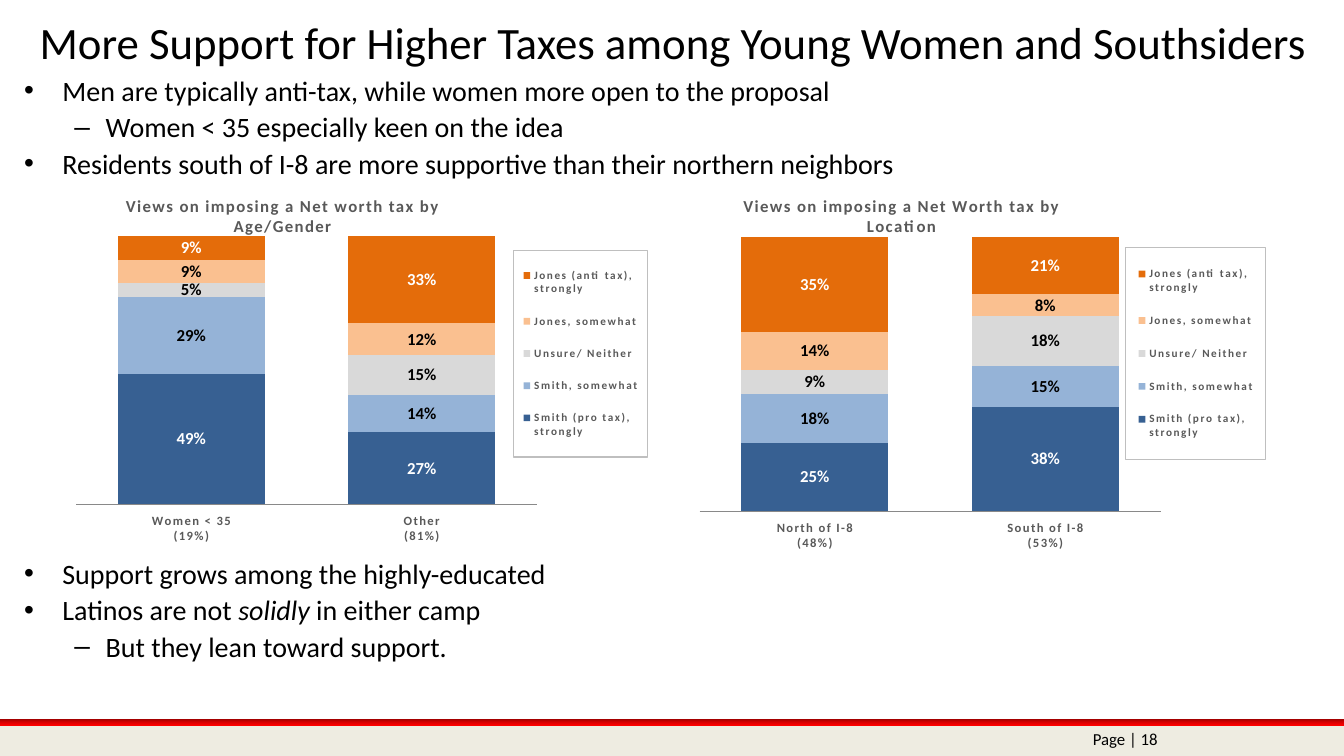
from dataclasses import dataclass

from lxml.etree import SubElement
from pptx import Presentation
from pptx.chart.data import CategoryChartData
from pptx.dml.color import RGBColor
from pptx.enum.chart import XL_CHART_TYPE, XL_LEGEND_POSITION, XL_TICK_LABEL_POSITION, XL_TICK_MARK
from pptx.enum.shapes import MSO_SHAPE
from pptx.enum.text import MSO_ANCHOR, PP_ALIGN
from pptx.oxml import parse_xml
from pptx.oxml.ns import nsdecls, qn
from pptx.util import Inches, Pt

FONT = "Calibri"
BLACK = RGBColor(0x00, 0x00, 0x00)
WHITE = RGBColor(0xFF, 0xFF, 0xFF)
GRAY = RGBColor(0x59, 0x59, 0x59)
AXIS_GRAY = RGBColor(0x89, 0x89, 0x89)
BEIGE = RGBColor(0xEE, 0xEC, 0xE1)
DARK_BLUE = RGBColor(0x37, 0x60, 0x92)
LIGHT_BLUE = RGBColor(0x95, 0xB3, 0xD7)
PALE_GRAY = RGBColor(0xD9, 0xD9, 0xD9)
LIGHT_ORANGE = RGBColor(0xFA, 0xC0, 0x90)
DARK_ORANGE = RGBColor(0xE4, 0x6C, 0x0A)
RED_STOPS = ((0, "970000"), (50, "D70000"), (100, "FF0000"))
LETTER_SPACING = "100"


@dataclass
class Answer:
    name: str
    color: RGBColor
    label_color: RGBColor


@dataclass
class Bullet:
    spans: list[str]  # every second span is italic
    level: int = 0


@dataclass
class Poll:
    title: list[str]
    box: tuple[float, float, float, float]
    groups: list[str]
    shares: list[tuple[float, float]]
    plot: tuple[float, float, float, float]
    legend: tuple[float, float, float, float]


ANSWERS = [
    Answer("Smith (pro tax), strongly", DARK_BLUE, WHITE),
    Answer("Smith, somewhat", LIGHT_BLUE, BLACK),
    Answer("Unsure/ Neither", PALE_GRAY, BLACK),
    Answer("Jones, somewhat", LIGHT_ORANGE, BLACK),
    Answer("Jones (anti tax), strongly", DARK_ORANGE, WHITE),
]
POLLS = [
    Poll(["Views on imposing a Net worth tax by", "Age/Gender"], (0.75, 1.87, 5.79, 3.6),
         ["Women < 35\n(19%)", "Other\n(81%)"],
         [(0.49, 0.27), (0.29, 0.14), (0.05, 0.15), (0.09, 0.12), (0.09, 0.33)],
         (0, 0.13, 0.79, 0.74), (0.75, 0.17, 0.23, 0.57)),
    Poll(["Views on imposing a Net Worth tax by", "Location"], (6.88, 1.87, 5.79, 3.68),
         ["North of I-8\n(48%)", "South of I-8\n(53%)"],
         [(0.25, 0.38), (0.18, 0.15), (0.09, 0.18), (0.14, 0.08), (0.35, 0.21)],
         (0.01, 0.13, 0.79, 0.74), (0.74, 0.16, 0.24, 0.57)),
]
TOP_BULLETS = [
    Bullet(["Men are typically anti-tax, while women more open to the proposal"]),
    Bullet(["Women < 35 especially keen on the idea"], 1),
    Bullet(["Residents south of I-8 are more supportive than their northern neighbors"]),
]
BOTTOM_BULLETS = [
    Bullet(["Support grows among the highly-educated"]),
    Bullet(["Latinos are not ", "solidly", " in either camp"]),
    Bullet(["But they lean toward support."], 1),
]
BULLET_STYLES = [("•", 0.38, 0.38), ("–", 0.81, 0.31)]  # mark, margin, hanging


def style_font(font, size: float, color: RGBColor, bold: bool = False) -> None:
    font.name, font.size, font.bold = FONT, Pt(size), bold
    font.color.rgb = color


def add_bar(page, left: float, top: float, width: float, height: float):
    bar = page.shapes.add_shape(MSO_SHAPE.RECTANGLE, Inches(left), Inches(top),
                                Inches(width), Inches(height))
    bar.shadow.inherit = False
    bar.line.fill.background()
    return bar


def add_frame(page, left: float, top: float, width: float, height: float):
    box = page.shapes.add_textbox(Inches(left), Inches(top), Inches(width), Inches(height))
    box.text_frame.word_wrap = True
    return box.text_frame


def add_line(page, box: tuple, text: str, size: float, align: PP_ALIGN) -> None:
    frame = add_frame(page, *box)
    frame.vertical_anchor = MSO_ANCHOR.MIDDLE
    para = frame.paragraphs[0]
    para.alignment = align
    span = para.add_run()
    span.text = text
    style_font(span.font, size, BLACK)


def add_bullets(page, top: float, bullets: list[Bullet]) -> None:
    frame = add_frame(page, 0.14, top, 12.95, 1.15)
    for row, bullet in enumerate(bullets):
        para = frame.add_paragraph() if row else frame.paragraphs[0]
        para.level = bullet.level
        para.space_before = Pt(2 if row else 0)
        mark, margin, hanging = BULLET_STYLES[bullet.level]
        properties = para._p.get_or_add_pPr()
        properties.set("marL", str(Inches(margin)))
        properties.set("indent", str(-Inches(hanging)))
        SubElement(properties, qn("a:buFont"), typeface="Arial")
        SubElement(properties, qn("a:buChar"), char=mark)
        for index, text in enumerate(bullet.spans):
            span = para.add_run()
            span.text = text
            style_font(span.font, 20, BLACK)
            span.font.italic = index % 2 == 1


def place_part(part, index: int, values: tuple, inner: bool = False) -> None:
    """Give a chart part its place, as fractions of the chart."""
    for old in part.findall(qn("c:layout")):
        part.remove(old)
    layout = parse_xml(f"<c:layout {nsdecls('c')}><c:manualLayout/></c:layout>")
    if inner:
        SubElement(layout[0], qn("c:layoutTarget"), val="inner")
    for mode in ("xMode", "yMode"):
        SubElement(layout[0], qn(f"c:{mode}"), val="edge")
    for side, value in zip("xywh", values):
        SubElement(layout[0], qn(f"c:{side}"), val=str(value))
    part.insert(index, layout)


def add_poll(page, poll: Poll) -> None:
    data = CategoryChartData(number_format="0%")
    data.categories = poll.groups
    for answer, shares in zip(ANSWERS, poll.shares):
        data.add_series(answer.name, shares)
    chart = page.shapes.add_chart(XL_CHART_TYPE.COLUMN_STACKED_100,
                                  *map(Inches, poll.box), data).chart
    style_font(chart.font, 18, BLACK)

    # Columns and their labels
    plot = chart.plots[0]
    plot.gap_width, plot.overlap, plot.vary_by_categories = 57, 100, False
    for series, answer in zip(plot.series, ANSWERS):
        series.format.fill.solid()
        series.format.fill.fore_color.rgb = answer.color
        labels = series.data_labels
        labels.show_value = True
        labels.number_format, labels.number_format_is_linked = "0%", False
        style_font(labels.font, 12, answer.label_color, True)

    # Axes
    groups, scale = chart.category_axis, chart.value_axis
    groups.major_tick_mark = XL_TICK_MARK.NONE
    groups.tick_label_position = XL_TICK_LABEL_POSITION.LOW
    groups.format.line.color.rgb = AXIS_GRAY
    style_font(groups.tick_labels.font, 9, GRAY, True)
    scale.minimum_scale, scale.maximum_scale, scale.major_unit = 0, 1, 0.2
    scale.has_major_gridlines = scale.visible = False

    # Title and legend
    frame = chart.chart_title.text_frame
    for row, text in enumerate(poll.title):
        para = frame.add_paragraph() if row else frame.paragraphs[0]
        para.alignment = PP_ALIGN.CENTER
        span = para.add_run()
        span.text = text
        style_font(span.font, 12, GRAY, True)
    chart.has_legend = True
    chart.legend.position = XL_LEGEND_POSITION.RIGHT
    chart.legend.include_in_layout = False
    style_font(chart.legend.font, 8, GRAY, True)

    # Part places, legend border and letter spacing
    title, area, legend = (chart.element.xpath(f".//c:{name}")[0]
                           for name in ("title", "plotArea", "legend"))
    place_part(title, 1, (0.08, 0.01))
    place_part(area, 0, poll.plot, True)
    place_part(legend, 1, poll.legend)
    legend.find(qn("c:txPr")).addprevious(parse_xml(
        f'<c:spPr {nsdecls("c", "a")}><a:ln w="9525"><a:solidFill>'
        '<a:srgbClr val="BFBFBF"/></a:solidFill></a:ln></c:spPr>'))
    for font in chart.element.xpath(
            ".//c:title//a:rPr | .//c:legend//a:defRPr | .//c:catAx//a:defRPr"):
        font.set("spc", LETTER_SPACING)


def main() -> None:
    deck = Presentation()
    deck.slide_width, deck.slide_height = Inches(13.33), Inches(7.5)
    page = deck.slides.add_slide(deck.slide_layouts[6])

    # Footer band and red stripe
    band = add_bar(page, 0, 7.19, 13.33, 0.31)
    band.fill.solid()
    band.fill.fore_color.rgb = BEIGE
    stripe = add_bar(page, -0.02, 7.13, 13.35, 0.07)
    stripe.fill.gradient()
    stripe.fill.gradient_angle = 270
    stops = stripe.element.xpath(".//a:gsLst")[0]
    stops.clear()
    for percent, color in RED_STOPS:
        stop = SubElement(stops, qn("a:gs"), pos=str(percent * 1000))
        SubElement(stop, qn("a:srgbClr"), val=color)

    # Text and charts
    add_line(page, (0.13, 0.08, 13.1, 0.67),
             "More Support for Higher Taxes among Young Women and Southsiders", 32, PP_ALIGN.CENTER)
    add_bullets(page, 0.68, TOP_BULLETS)
    add_line(page, (9.25, 7.2, 2.33, 0.25), "Page | 18", 12, PP_ALIGN.RIGHT)
    for poll in POLLS:
        add_poll(page, poll)
    add_bullets(page, 5.47, BOTTOM_BULLETS)
    deck.save("out.pptx")


if __name__ == "__main__":
    main()
